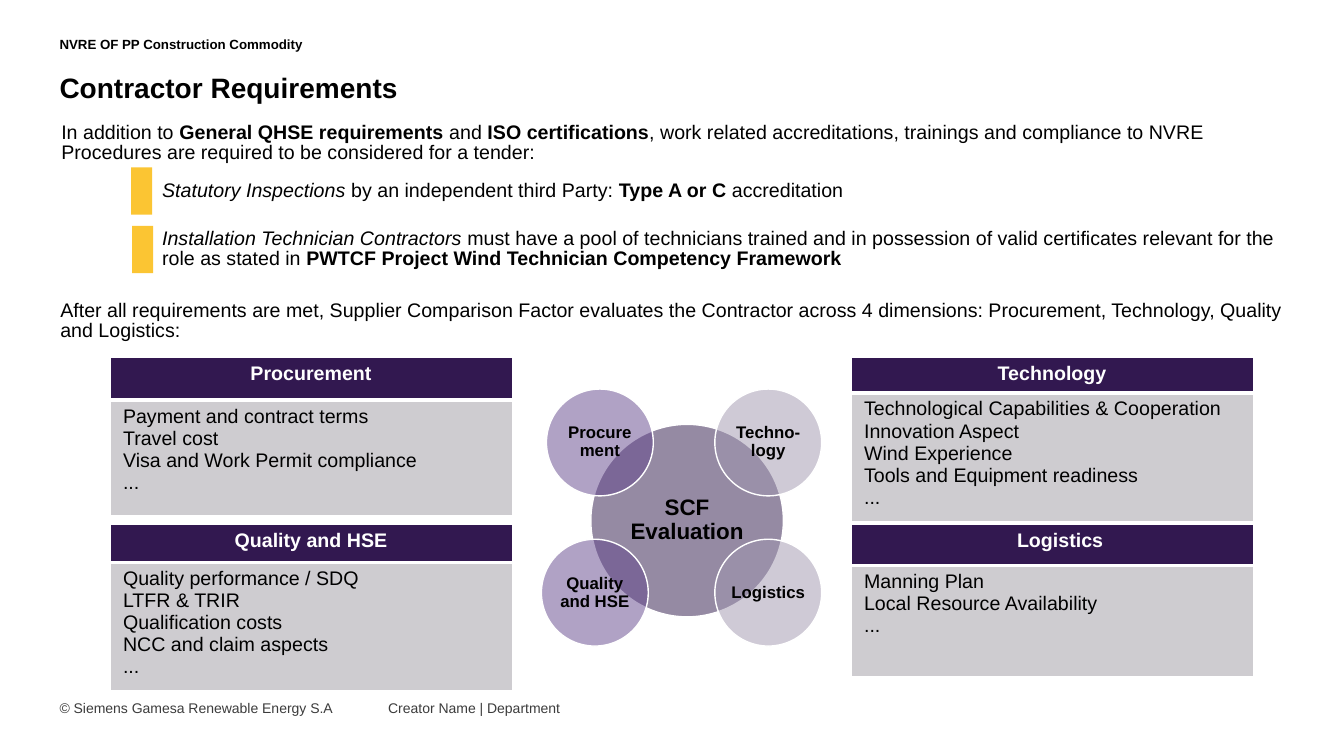
from lxml import etree
from pptx import Presentation
from pptx import util as u
from pptx.dml.color import RGBColor
from pptx.enum import shapes, text
from pptx.oxml.ns import qn

COLORS = {
    "black": "000000", "white": "FFFFFF", "gray": "3C3C3C", "amber": "FBC533",
    "header": "321850", "body": "CECCD0",
    "core": "2D1649", "violet": "63468D", "lilac": "A097AF",
}
CENTER = text.PP_ALIGN.CENTER
MIDDLE = text.MSO_ANCHOR.MIDDLE


def color(name):
    return RGBColor.from_string(COLORS[name])


def write(frame, paragraphs, size=14, ink="black", bold=False, align=None, spacing=None):
    for index, spans in enumerate(paragraphs):
        para = frame.add_paragraph() if index else frame.paragraphs[0]
        para.alignment = align or text.PP_ALIGN.LEFT
        if spacing:
            para.line_spacing = spacing
        for words, style in [(spans, "")] if isinstance(spans, str) else spans:
            span = para.add_run()
            span.text = words
            span.font.name = "Arial"
            span.font.size = u.Pt(size)
            span.font.bold = bold or style == "bold"
            span.font.italic = style == "italic"
            span.font.color.rgb = color(ink)


class SlideBuilder:
    font_insets = (0.1, 0.05, 0.02, 0.05)

    def __init__(self, deck):
        self.page = deck.slides.add_slide(deck.slide_layouts[6])

    def prepare(self, frame, insets, anchor):
        frame.word_wrap = True
        frame.vertical_anchor = anchor
        (frame.margin_left, frame.margin_top,
         frame.margin_right, frame.margin_bottom) = map(u.Inches, insets)

    def label(self, place, words, anchor=text.MSO_ANCHOR.TOP, **style):
        box = self.page.shapes.add_textbox(*map(u.Inches, place))
        self.prepare(box.text_frame, (0, 0, 0, 0), anchor)
        write(box.text_frame, [words], **style)

    def shape(self, kind, place, fill):
        shape = self.page.shapes.add_shape(kind, *map(u.Inches, place))
        shape.shadow.inherit = False
        shape.fill.solid()
        shape.fill.fore_color.rgb = color(fill)
        shape.line.fill.background()
        return shape

    def bar(self, left, top):
        self.shape(shapes.MSO_SHAPE.RECTANGLE, (left, top, 0.21, 0.47), "amber")

    def statement(self, place, spans):
        box = self.shape(shapes.MSO_SHAPE.RECTANGLE, place, "white")
        self.prepare(box.text_frame, self.font_insets, MIDDLE)
        write(box.text_frame, [spans], spacing=0.85)

    def circle(self, left, top, diameter, fill, words, size=12, side=0.02):
        circle = self.shape(shapes.MSO_SHAPE.OVAL, (left, top, diameter, diameter), fill)
        tint = circle.fill._xPr.find(qn("a:solidFill"))[0]
        etree.SubElement(tint, qn("a:alpha"), val="50000")
        circle.line.fill.solid()
        circle.line.color.rgb = color("white")
        circle.line.width = u.Pt(1)
        self.prepare(circle.text_frame, (side, 0.02, side, 0.02), MIDDLE)
        write(circle.text_frame, [words], size=size, bold=True, align=CENTER, spacing=0.9)

    def border(self, cell, bottom):
        properties = cell._tc.get_or_add_tcPr()
        for index, (side, width) in enumerate(zip("LRTB", (1, 1, 1, bottom))):
            line = etree.Element(qn(f"a:ln{side}"), w=str(u.Pt(width)))
            fill = etree.SubElement(line, qn("a:solidFill"))
            etree.SubElement(fill, qn("a:srgbClr"), val=COLORS["white"])
            properties.insert(index, line)

    def card(self, left, top, heights, title, items, indent=0.13):
        place = map(u.Inches, (left, top, 3.99, sum(heights)))
        table = self.page.shapes.add_table(2, 1, *place).table
        rows = (
            ([title], "header", 3, indent, {"ink": "white", "bold": True, "align": CENTER}),
            (items, "body", 1, 0.13, {}),
        )
        for index, (lines, fill, bottom, inset, style) in enumerate(rows):
            table.rows[index].height = u.Inches(heights[index])
            cell = table.cell(index, 0)
            cell.fill.solid()
            cell.fill.fore_color.rgb = color(fill)
            cell.margin_left, cell.margin_right = u.Inches(inset), u.Inches(0.13)
            cell.margin_top = cell.margin_bottom = u.Inches(0.05)
            self.border(cell, bottom)
            write(cell.text_frame, lines, **style)


def main():
    deck = Presentation()
    deck.slide_width, deck.slide_height = u.Inches(13.33), u.Inches(7.5)
    slide = SlideBuilder(deck)

    slide.label((0.59, 6.94, 3.02, 0.17), "© Siemens Gamesa Renewable Energy S.A",
                size=10, ink="gray")
    slide.label((3.85, 6.94, 6.03, 0.17), "Creator Name | Department", size=10, ink="gray")

    left, right, upper, lower = 1.09, 8.44, 3.55, 5.2
    slide.card(left, upper, (0.42, 1.15), "Procurement", [
        "Payment and contract terms", "Travel cost",
        "Visa and Work Permit compliance", "..."])
    slide.card(right, upper, (0.35, 1.27), "Technology", [
        "Technological Capabilities & Cooperation", "Innovation Aspect",
        "Wind Experience", "Tools and Equipment readiness", "..."])
    slide.card(right, lower, (0.41, 1.1), "Logistics", [
        "Manning Plan", "Local Resource Availability", "..."], indent=0.29)
    slide.card(left, lower, (0.38, 1.26), "Quality and HSE", [
        "Quality performance / SDQ", "LTFR & TRIR", "Qualification costs",
        "NCC and claim aspects", "..."])

    slide.circle(5.86, 4.21, 1.91, "core", "SCF Evaluation", size=16)
    for x, y, fill, words, side in (
        (5.42, 3.86, "violet", "Procurement", 0),
        (7.09, 3.86, "lilac", "Techno-logy", 0.02),
        (7.09, 5.35, "lilac", "Logistics", 0),
        (5.37, 5.35, "violet", "Quality and HSE", 0.02),
    ):
        slide.circle(x, y, 1.06, fill, words, side=side)

    slide.statement((0.51, 1.19, 12.33, 0.47), [
        ("In addition to ", ""), ("General QHSE requirements ", "bold"), ("and ", ""),
        ("ISO certifications", "bold"),
        (", work related accreditations, trainings and compliance to NVRE Procedures "
         "are required to be considered for a tender:", "")])
    slide.statement((1.51, 2.2, 11.33, 0.56), [
        ("Installation Technician Contractors ", "italic"),
        ("must have a pool of technicians trained and in possession of valid certificates "
         "relevant for the role as stated in ", ""),
        ("PWTCF Project Wind Technician Competency Framework", "bold")])
    slide.bar(1.31, 2.24)
    slide.statement((0.5, 2.96, 12.34, 0.47),
                    "After all requirements are met, Supplier Comparison Factor evaluates the "
                    "Contractor across 4 dimensions: Procurement, Technology, Quality and "
                    "Logistics:")
    slide.statement((1.51, 1.67, 11.33, 0.47), [
        ("Statutory Inspections ", "italic"), ("by an independent third Party: ", ""),
        ("Type A or C ", "bold"), ("accreditation", "")])
    slide.bar(1.3, 1.66)

    slide.label((0.59, 0.36, 9.25, 0.2), "NVRE OF PP Construction Commodity",
                size=9.5, bold=True)
    slide.label((0.59, 0.69, 11.31, 0.34), "Contractor Requirements",
                anchor=text.MSO_ANCHOR.BOTTOM, size=20, bold=True)
    deck.save("out.pptx")


if __name__ == "__main__":
    main()
